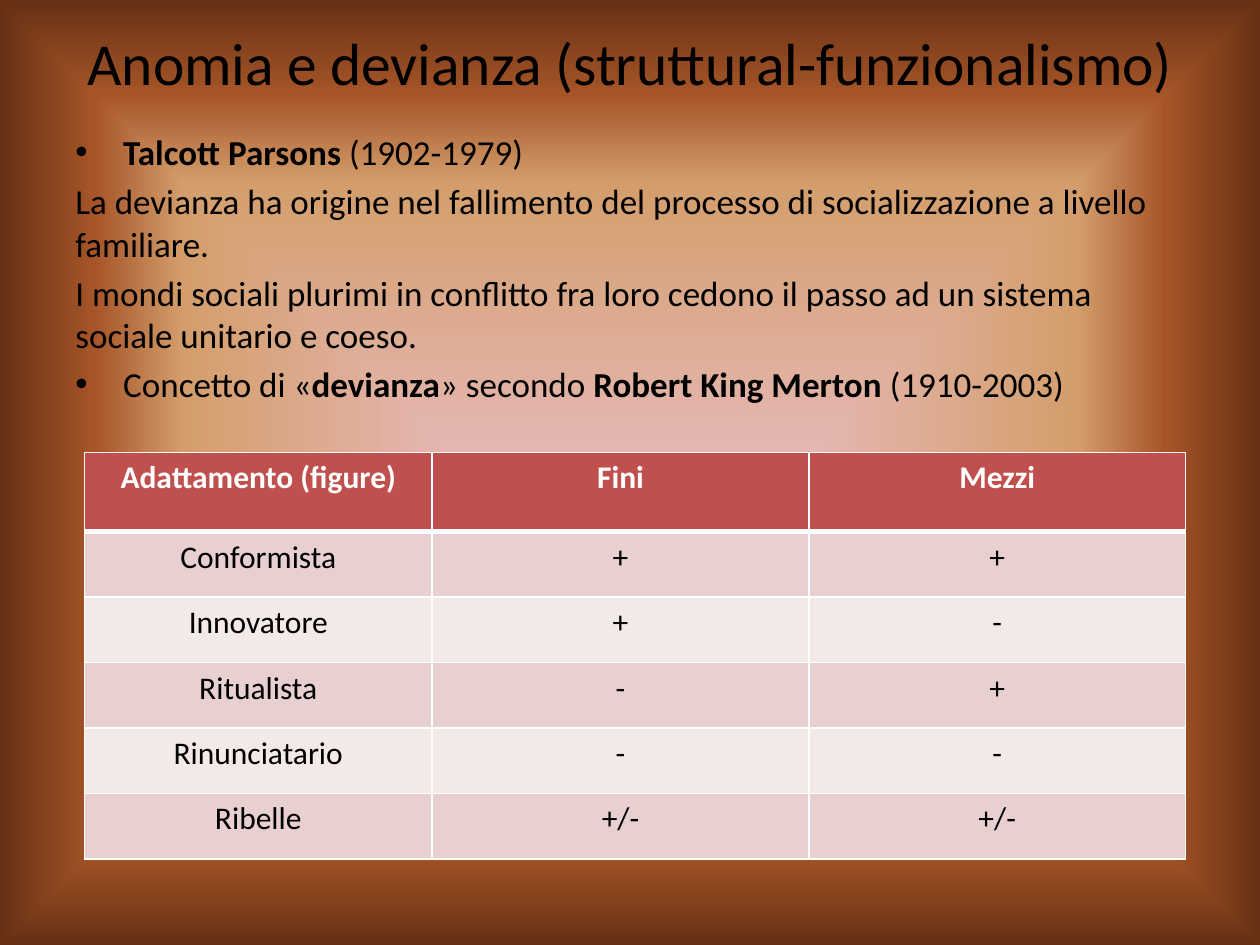
"""Build the slide on anomie and deviance with its table of adaptations."""
from dataclasses import dataclass

import lxml.etree
import pptx
import pptx.dml.color
import pptx.enum.text
import pptx.oxml.ns
import pptx.util

Inches = pptx.util.Inches
Pt = pptx.util.Pt
qn = pptx.oxml.ns.qn
CENTER = pptx.enum.text.PP_ALIGN.CENTER


@dataclass
class Run:
    text: str
    bold: bool = False


@dataclass
class Para:
    runs: list[Run]
    bullet: bool = False


BODY = [
    Para([Run("Talcott Parsons ", True), Run("(1902-1979)")], bullet=True),
    Para([Run("La devianza ha origine nel fallimento del processo di "
              "socializzazione a livello familiare.")]),
    Para([Run("I mondi sociali plurimi in conflitto fra loro cedono il passo "
              "ad un sistema sociale unitario e coeso.")]),
    Para([Run("Concetto di «"), Run("devianza", True), Run("» secondo "),
          Run("Robert King Merton ", True), Run("(1910-2003)")], bullet=True),
]
ADAPTATIONS = [
    ("Adattamento (figure)", "Fini", "Mezzi"),
    ("Conformista", "+", "+"),
    ("Innovatore", "+", "-"),
    ("Ritualista", "-", "+"),
    ("Rinunciatario", "-", "-"),
    ("Ribelle", "+/-", "+/-"),
]
STOPS = [(0, "E6B9B8"), (61, "D49E6C"), (80, "A65528"), (100, "663012")]


def rgb(color: str) -> pptx.dml.color.RGBColor:
    return pptx.dml.color.RGBColor.from_string(color)


def sub(parent, tag: str, **attrs):
    return lxml.etree.SubElement(
        parent, qn(tag), {k: str(v) for k, v in attrs.items()})


def add_run(p, text: str, *, size: float, color: str = "000000",
            bold: bool = False) -> None:
    r = p.add_run()
    r.text = text
    r.font.name = "Calibri"
    r.font.size = Pt(size)
    r.font.bold = bold
    r.font.color.rgb = rgb(color)


def set_background(s) -> None:
    s.background.fill.gradient()
    grad = next(s._element.iter(qn("a:gradFill")))
    for child in list(grad):
        grad.remove(child)
    stops = sub(grad, "a:gsLst")
    for pos, color in STOPS:
        sub(sub(stops, "a:gs", pos=pos * 1000), "a:srgbClr", val=color)
    path = sub(grad, "a:path", path="rect")
    sub(path, "a:fillToRect", l=50000, t=50000, r=50000, b=50000)


def set_title(s, text: str) -> None:
    sp = s.shapes.title
    sp.left, sp.top, sp.width, sp.height = map(Inches, (0.5, 0.3, 9, 0.38))
    tf = sp.text_frame
    tf.word_wrap = True
    tf.auto_size = pptx.enum.text.MSO_AUTO_SIZE.NONE
    tf.vertical_anchor = pptx.enum.text.MSO_ANCHOR.MIDDLE
    p = tf.paragraphs[0]
    p.alignment = CENTER
    add_run(p, text, size=34)


def add_body(s, paras: list[Para]) -> None:
    sp = s.shapes.add_textbox(*map(Inches, (0.5, 0.99, 9, 6.22)))
    tf = sp.text_frame
    tf.word_wrap = True
    for i, para in enumerate(paras):
        p = tf.add_paragraph() if i else tf.paragraphs[0]
        if para.bullet:
            pPr = p._p.get_or_add_pPr()
            pPr.set("marL", str(Inches(0.38)))
            pPr.set("indent", str(Inches(-0.38)))
            sub(pPr, "a:buFont", typeface="Arial")
            sub(pPr, "a:buChar", char="•")
        p.space_before = Pt(4 if i else 0)
        for run in para.runs:
            add_run(p, run.text, size=20, bold=run.bold)


def set_borders(cell, top: float, bottom: float) -> None:
    tcPr = cell._tc.get_or_add_tcPr()
    for side, width in (("L", 1), ("R", 1), ("T", top), ("B", bottom)):
        ln = sub(tcPr, f"a:ln{side}", w=Pt(width))
        sub(sub(ln, "a:solidFill"), "a:srgbClr", val="FFFFFF")


def add_table(s, rows: list[tuple[str, ...]]) -> None:
    shape = s.shapes.add_table(
        len(rows), len(rows[0]), *map(Inches, (0.67, 3.59, 8.74, 3.23)))
    table = shape.table
    for col, width in zip(table.columns, (2.76, 2.99, 2.99)):
        col.width = Inches(width)
    for i, values in enumerate(rows):
        header = i == 0
        table.rows[i].height = Inches(0.63 if header else 0.52)
        band = "E8D0D0" if i % 2 else "F4E9E9"
        for j, value in enumerate(values):
            cell = table.cell(i, j)
            set_borders(cell, 3 if i == 1 else 1, 3 if header else 1)
            cell.fill.solid()
            cell.fill.fore_color.rgb = rgb("C0504D" if header else band)
            p = cell.text_frame.paragraphs[0]
            p.alignment = CENTER
            add_run(p, value, size=18, bold=header,
                    color="FFFFFF" if header else "000000")


def main() -> None:
    prs = pptx.Presentation()
    prs.slide_width, prs.slide_height = Inches(10), Inches(7.5)
    s = prs.slides.add_slide(prs.slide_layouts[5])
    set_background(s)
    set_title(s, "Anomia e devianza (struttural-funzionalismo)")
    add_body(s, BODY)
    add_table(s, ADAPTATIONS)
    prs.save("out.pptx")


if __name__ == "__main__":
    main()
